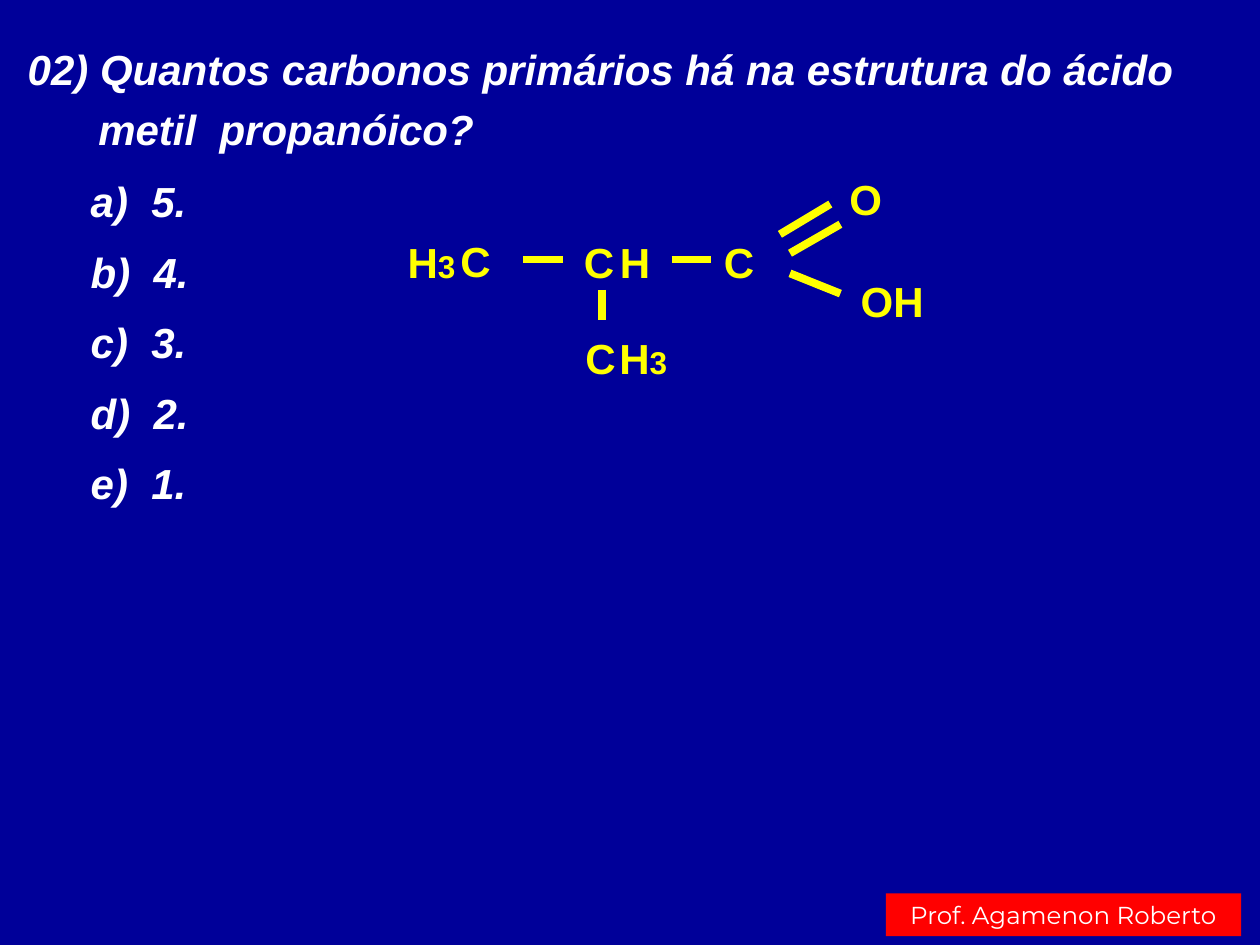
from dataclasses import dataclass

import pptx
import pptx.dml.color
import pptx.enum.shapes
import pptx.enum.text
import pptx.oxml.xmlchemy
import pptx.util
from pptx.util import Inches

NAVY = pptx.dml.color.RGBColor(0x00, 0x00, 0x99)
WHITE = pptx.dml.color.RGBColor(0xFF, 0xFF, 0xFF)
YELLOW = pptx.dml.color.RGBColor(0xFF, 0xFF, 0x00)
RED = pptx.dml.color.RGBColor(0xFF, 0x00, 0x00)
ALIGN = pptx.enum.text.PP_ALIGN
ANCHOR = pptx.enum.text.MSO_ANCHOR


@dataclass
class Atom:
    symbol: str
    left: float
    top: float
    width: float
    subscript: str = ""


@dataclass
class Bond:
    start: tuple[float, float]
    end: tuple[float, float]


@dataclass
class Line:
    text: str
    indent: float = 0


CHAIN_TOP, BRANCH_TOP = 1.83, 2.59
BOND_Y = 2.06
ATOMS = [
    Atom("H", 3.13, CHAIN_TOP, 0.59, "3"),
    Atom("C", 3.55, 1.82, 0.45),
    Atom("C", 4.53, CHAIN_TOP, 0.45),
    Atom("H", 4.81, CHAIN_TOP, 0.46),
    Atom("C", 5.64, CHAIN_TOP, 0.45),
    Atom("O", 6.64, 1.33, 0.46),
    Atom("OH", 6.72, 2.14, 0.72),
    Atom("C", 4.54, BRANCH_TOP, 0.45),
    Atom("H", 4.81, BRANCH_TOP, 0.59, "3"),
]
BONDS = [
    Bond((4.15, BOND_Y), (4.47, BOND_Y)),
    Bond((5.33, BOND_Y), (5.64, BOND_Y)),
    Bond((4.78, 2.30), (4.78, 2.54)),
    Bond((6.19, 1.86), (6.59, 1.62)),
    Bond((6.27, 2.01), (6.67, 1.78)),
    Bond((6.27, 2.17), (6.67, 2.33)),
]
QUESTION = [
    Line("02) Quantos carbonos primários há na estrutura do ácido"),
    Line("metil  propanóico?", indent=0.56),
]
OPTIONS = [Line(f"{letter})  {count}.") for letter, count in zip("abcde", range(5, 0, -1))]


def add_run(paragraph, text: str, size: float, color, font_name: str = "Arial",
            bold: bool = True, italic: bool = False) -> None:
    run = paragraph.add_run()
    run.text = text
    run.font.name = font_name
    run.font.size = pptx.util.Pt(size)
    run.font.bold = bold
    run.font.italic = italic
    run.font.color.rgb = color


def fill_placeholder(shape, box: tuple, lines: list[Line], spacing: float, wrap: bool) -> None:
    shape.left, shape.top, shape.width, shape.height = map(Inches, box)
    frame = shape.text_frame
    frame.word_wrap = wrap
    frame.auto_size = pptx.enum.text.MSO_AUTO_SIZE.NONE
    frame.vertical_anchor = ANCHOR.MIDDLE
    for index, line in enumerate(lines):
        paragraph = frame.paragraphs[0] if index == 0 else frame.add_paragraph()
        paragraph.alignment = ALIGN.JUSTIFY
        paragraph.line_spacing = spacing
        paragraph.space_before = pptx.util.Pt(0)
        # Indent the line and remove the template's bullet
        properties = paragraph._p.get_or_add_pPr()
        properties.set("marL", str(Inches(line.indent)))
        properties.set("indent", "0")
        properties.append(pptx.oxml.xmlchemy.OxmlElement("a:buNone"))
        add_run(paragraph, line.text, 24, WHITE, italic=True)


def add_atom(slide, atom: Atom) -> None:
    box = slide.shapes.add_textbox(
        Inches(atom.left), Inches(atom.top), Inches(atom.width), Inches(0.51))
    box.text_frame.word_wrap = False
    paragraph = box.text_frame.paragraphs[0]
    paragraph.alignment = ALIGN.CENTER
    add_run(paragraph, atom.symbol, 24, YELLOW)
    if atom.subscript:
        add_run(paragraph, atom.subscript, 18, YELLOW)


def add_bond(slide, bond: Bond) -> None:
    connector = slide.shapes.add_connector(
        pptx.enum.shapes.MSO_CONNECTOR.STRAIGHT, *map(Inches, bond.start + bond.end))
    connector.line.color.rgb = YELLOW
    connector.line.width = pptx.util.Pt(4.5)
    connector._element.spPr.append(pptx.oxml.xmlchemy.OxmlElement("a:effectLst"))


def add_author(slide) -> None:
    shape = slide.shapes.add_shape(
        pptx.enum.shapes.MSO_SHAPE.RECTANGLE,
        Inches(7.03), Inches(7.09), Inches(2.82), Inches(0.34))
    shape.shadow.inherit = False
    shape.fill.solid()
    shape.fill.fore_color.rgb = RED
    shape.line.fill.background()
    shape.text_frame.word_wrap = False
    shape.text_frame.vertical_anchor = ANCHOR.TOP
    paragraph = shape.text_frame.paragraphs[0]
    paragraph.alignment = ALIGN.CENTER
    add_run(paragraph, "Prof. Agamenon Roberto", 14, WHITE, "Montserrat", bold=False)


def main() -> None:
    presentation = pptx.Presentation()
    presentation.slide_width = Inches(10)
    presentation.slide_height = Inches(7.5)
    slide = presentation.slides.add_slide(presentation.slide_layouts[1])
    slide.background.fill.solid()
    slide.background.fill.fore_color.rgb = NAVY

    # Question and answer options
    fill_placeholder(slide.shapes.title, (0.12, 0.21, 9.65, 1.07), QUESTION, 1.2, wrap=True)
    fill_placeholder(slide.placeholders[1], (0.62, 1.17, 0.99, 2.93), OPTIONS, 1.4, wrap=False)

    # Structural formula
    for bond in BONDS:
        add_bond(slide, bond)
    for atom in ATOMS:
        add_atom(slide, atom)

    # Author label
    add_author(slide)
    presentation.save("out.pptx")


if __name__ == "__main__":
    main()
